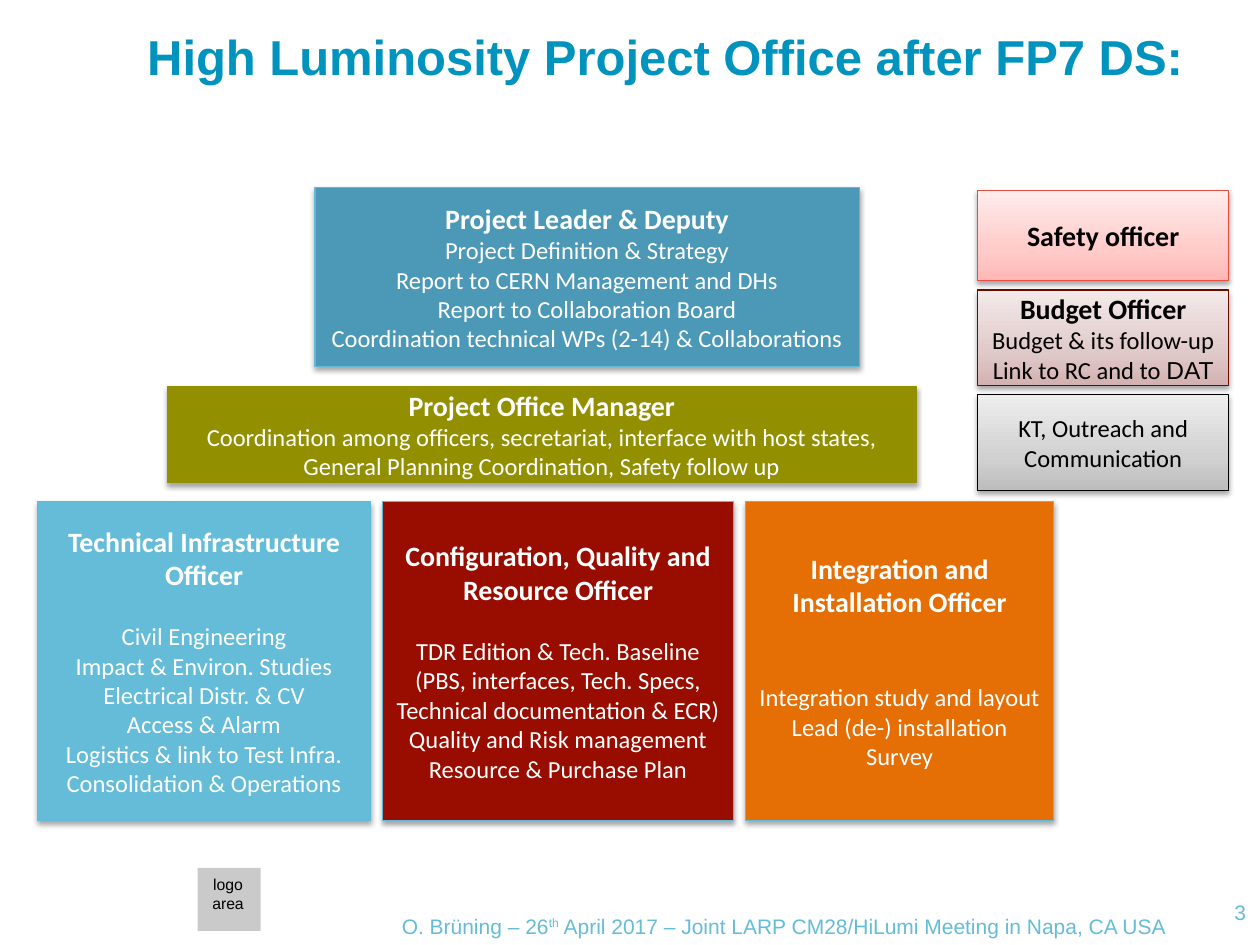
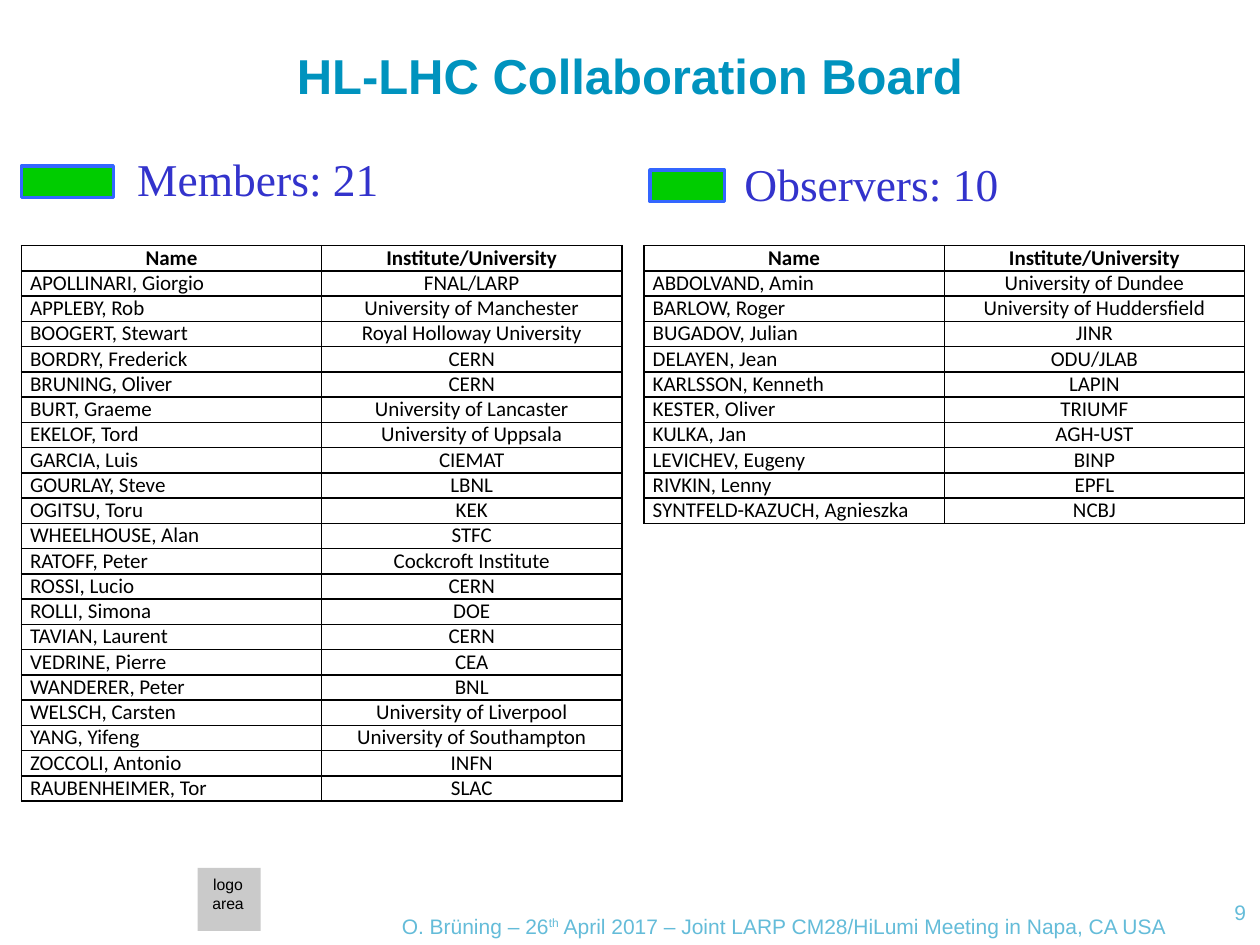
"""Build the two HL-LHC project office and collaboration board slides."""
import copy

import pptx
import pptx.dml.color
import pptx.enum.shapes
import pptx.enum.text
import pptx.oxml
import pptx.oxml.ns
import pptx.util

Pt = pptx.util.Pt
RGBColor = pptx.dml.color.RGBColor
ALIGN = pptx.enum.text.PP_ALIGN
ANCHOR = pptx.enum.text.MSO_ANCHOR
RECTANGLE = pptx.enum.shapes.MSO_SHAPE.RECTANGLE
qn = pptx.oxml.ns.qn

WHITE = RGBColor(0xFF, 0xFF, 0xFF)
BLACK = RGBColor(0x00, 0x00, 0x00)
TITLE_BLUE = RGBColor(0x00, 0x93, 0xBE)
SKY = RGBColor(0x64, 0xBC, 0xD9)
SKY_EDGE = RGBColor(0x5F, 0xB9, 0xD7)
STEEL = RGBColor(0x4C, 0x98, 0xB7)
OLIVE = RGBColor(0x92, 0x90, 0x00)
DARK_RED = RGBColor(0x98, 0x0D, 0x00)
ORANGE = RGBColor(0xE5, 0x6E, 0x05)
WINE = RGBColor(0x6E, 0x0A, 0x00)
RED = RGBColor(0xE5, 0x4E, 0x41)
LOGO_GREY = RGBColor(0xCA, 0xCA, 0xCA)
KEY_GREEN = RGBColor(0x00, 0xCC, 0x00)
KEY_EDGE = RGBColor(0x33, 0x66, 0xFF)
KEY_TEXT = RGBColor(0x33, 0x33, 0xCC)
PINKS = [RGBColor(0xFF, 0xB8, 0xB5), RGBColor(0xFF, 0xCC, 0xCA), RGBColor(0xFF, 0xEC, 0xEB)]
ROSES = [RGBColor(0xD4, 0xB1, 0xB1), RGBColor(0xE0, 0xC9, 0xC9), RGBColor(0xF4, 0xEA, 0xEA)]
GREYS = [RGBColor(0xBD, 0xBD, 0xBD), RGBColor(0xD1, 0xD1, 0xD1), RGBColor(0xEE, 0xEE, 0xEE)]
GRADIENT_POSITIONS = [0, 0.35, 1]

FOOTER = ["O. Brüning – 26", "th", " April 2017 – Joint LARP CM28/HiLumi Meeting in Napa, CA USA"]

LEADERS = [
    ((180, 107.3, 311, 102.2), STEEL, SKY_EDGE, "Project Leader & Deputy", [
        "Project Definition & Strategy", "Report to CERN Management and DHs",
        "Report to Collaboration Board", "Coordination technical WPs (2-14) & Collaborations"]),
    ((95.8, 221, 427.7, 54.7), OLIVE, OLIVE, "Project Office Manager", [
        "Coordination among officers, secretariat, interface with host states, "
        "General Planning Coordination, Safety follow up"]),
]
OFFICERS = [
    (190, SKY, 17, "Technical Infrastructure Officer", [
        "Civil Engineering", "Impact & Environ. Studies", "Electrical Distr. & CV",
        "Access & Alarm", "Logistics & link to Test Infra.", "Consolidation & Operations"]),
    (200.6, DARK_RED, 17, "Configuration, Quality and Resource Officer", [
        "TDR Edition & Tech. Baseline",
        "(PBS, interfaces, Tech. Specs, Technical documentation & ECR)",
        "Quality and Risk management", "Resource & Purchase Plan"]),
    (175.8, ORANGE, 36.5, "Integration and Installation Officer", [
        "Integration study and layout", "Lead (de-) installation", "Survey"]),
]
SUPPORT = [
    (51.8, PINKS, RED, "Safety officer", []),
    (54.7, ROSES, WINE, "Budget Officer", ["Budget & its follow-up", "Link to RC and to "]),
    (54.7, GREYS, BLACK, None, ["KT, Outreach and Communication"]),
]

TABLE_HEAD = ("Name", "Institute/University")
MEMBERS = [
    ("APOLLINARI, Giorgio", "FNAL/LARP"),
    ("APPLEBY, Rob", "University of Manchester"),
    ("BOOGERT, Stewart", "Royal Holloway University"),
    ("BORDRY, Frederick", "CERN"),
    ("BRUNING, Oliver", "CERN"),
    ("BURT, Graeme", "University of Lancaster"),
    ("EKELOF, Tord", "University of Uppsala"),
    ("GARCIA, Luis", "CIEMAT"),
    ("GOURLAY, Steve", "LBNL"),
    ("OGITSU, Toru", "KEK"),
    ("WHEELHOUSE, Alan", "STFC"),
    ("RATOFF, Peter", "Cockcroft Institute"),
    ("ROSSI, Lucio", "CERN"),
    ("ROLLI, Simona", "DOE"),
    ("TAVIAN, Laurent", "CERN"),
    ("VEDRINE, Pierre", "CEA"),
    ("WANDERER, Peter", "BNL"),
    ("WELSCH, Carsten", "University of Liverpool"),
    ("YANG, Yifeng", "University of Southampton"),
    ("ZOCCOLI, Antonio", "INFN"),
    ("RAUBENHEIMER, Tor", "SLAC"),
]
OBSERVERS = [
    ("ABDOLVAND, Amin", "University of Dundee"),
    ("BARLOW, Roger", "University of Huddersfield"),
    ("BUGADOV, Julian", "JINR"),
    ("DELAYEN, Jean", "ODU/JLAB"),
    ("KARLSSON, Kenneth", "LAPIN"),
    ("KESTER, Oliver", "TRIUMF"),
    ("KULKA, Jan", "AGH-UST"),
    ("LEVICHEV, Eugeny", "BINP"),
    ("RIVKIN, Lenny", "EPFL"),
    ("SYNTFELD-KAZUCH, Agnieszka", "NCBJ"),
]
BOARD = [
    ("Members: 21", (12.2, 95, 52.6, 18), (71.3, 82.8, 170, 70.6), 12.2, MEMBERS),
    ("Observers: 10", (371.5, 97.2, 42.5, 18), (418.3, 85.7, 173.5, 38.9), 368, OBSERVERS),
]
TABLE_TOP, ROW_HEIGHT, COLUMN_WIDTH = 140.4, 14.4, 171.6


def points(*lengths):
    return [Pt(length) for length in lengths]


def style_para(para, size, font, color, bold=False, align=ALIGN.CENTER):
    para.alignment = align
    for span in para.runs:
        span.font.size = Pt(size)
        span.font.name = font
        span.font.color.rgb = color
        span.font.bold = bold


def clear_margins(frame, anchor):
    frame.margin_left = frame.margin_right = frame.margin_top = frame.margin_bottom = 0
    frame.vertical_anchor = anchor
    frame.word_wrap = True
    frame.auto_size = pptx.enum.text.MSO_AUTO_SIZE.NONE


def add_text(page, place, text, size, font, color, align):
    box = page.shapes.add_textbox(*points(*place))
    frame = box.text_frame
    frame.word_wrap = True
    frame.text = text
    for para in frame.paragraphs:
        style_para(para, size, font, color, align=align)
    return frame


def add_rectangle(page, place, fill, edge=None, edge_width=0.75):
    box = page.shapes.add_shape(RECTANGLE, *points(*place))
    box.shadow.inherit = False
    if isinstance(fill, list):
        box.fill.gradient()
        box.fill.gradient_angle = 90
        stops = box._element.spPr.find(".//" + qn("a:gsLst"))
        stops.insert(1, copy.deepcopy(stops[0]))
        for stop, color, position in zip(box.fill.gradient_stops, fill, GRADIENT_POSITIONS):
            stop.color.rgb = color
            stop.position = position
    else:
        box.fill.solid()
        box.fill.fore_color.rgb = fill
    if edge is None:
        box.line.fill.background()
    else:
        box.line.color.rgb = edge
        box.line.width = Pt(edge_width)
    return box


def add_role(page, place, fill, edge, heading, duties, gap=0):
    box = add_rectangle(page, place, fill, edge)
    box._element.spPr.find(qn("a:effectLst")).append(pptx.oxml.parse_xml(
        f'<a:outerShdw {pptx.oxml.ns.nsdecls("a")} blurRad="{Pt(3.1)}" dist="{Pt(1.8)}" '
        'dir="5400000" rotWithShape="0"><a:srgbClr val="000000"><a:alpha val="35000"/>'
        '</a:srgbClr></a:outerShdw>'))
    color = BLACK if isinstance(fill, list) else WHITE
    frame = box.text_frame
    frame.vertical_anchor = ANCHOR.MIDDLE
    frame.text = "\n".join(([heading] if heading else []) + duties)
    for index, para in enumerate(frame.paragraphs):
        is_heading = index == 0 and heading is not None
        style_para(para, 16 if is_heading else 14, "Calibri", color, is_heading)
    if gap:
        frame.paragraphs[1].space_before = Pt(gap)
    return frame


def add_page(deck, title, title_place, number):
    page = deck.slides.add_slide(deck.slide_layouts[5])
    add_rectangle(page, (113, 496, 36, 36), LOGO_GREY)
    logo = add_text(page, (115.2, 499.7, 30.2, 21.6), "logo\narea", 9, "Arial", BLACK, ALIGN.CENTER)
    clear_margins(logo, ANCHOR.TOP)

    heading = page.shapes.title
    heading.left, heading.top, heading.width, heading.height = points(*title_place)
    heading.text_frame.text = title
    clear_margins(heading.text_frame, ANCHOR.MIDDLE)
    style_para(heading.text_frame.paragraphs[0], 28, "Arial", TITLE_BLUE, True)

    page_number = add_text(page, (684, 500.4, 28, 28), number, 12, "Arial", SKY, ALIGN.RIGHT)
    clear_margins(page_number, ANCHOR.BOTTOM)

    footer = add_text(page, (144.7, 508.3, 522, 28), FOOTER[0], 12, "Arial", SKY, ALIGN.RIGHT)
    clear_margins(footer, ANCHOR.BOTTOM)
    para = footer.paragraphs[0]
    for part in FOOTER[1:]:
        para.add_run().text = part
    style_para(para, 12, "Arial", SKY, align=ALIGN.RIGHT)
    para.runs[1]._r.get_or_add_rPr().set("baseline", "30000")
    return page


def add_borders(cell):
    properties = cell._tc.get_or_add_tcPr()
    for index, side in enumerate(("lnL", "lnR", "lnT", "lnB")):
        properties.insert(index, pptx.oxml.parse_xml(
            f'<a:{side} {pptx.oxml.ns.nsdecls("a")} w="{Pt(1)}"><a:solidFill>'
            f'<a:srgbClr val="{BLACK}"/></a:solidFill></a:{side}>'))


def add_people(page, left, people):
    rows = [TABLE_HEAD] + people
    frame = page.shapes.add_table(
        len(rows), 2, *points(left, TABLE_TOP, 2 * COLUMN_WIDTH, len(rows) * ROW_HEIGHT))
    table = frame.table
    table.horz_banding = False
    for column in table.columns:
        column.width = Pt(COLUMN_WIDTH)
    for row_index, row in enumerate(rows):
        table.rows[row_index].height = Pt(ROW_HEIGHT)
        for column_index, text in enumerate(row):
            cell = table.cell(row_index, column_index)
            cell.margin_left = cell.margin_right = Pt(5)
            cell.margin_top = cell.margin_bottom = 0
            cell.fill.solid()
            cell.fill.fore_color.rgb = WHITE
            add_borders(cell)
            cell.text_frame.text = text
            para = cell.text_frame.paragraphs[0]
            para.line_spacing = Pt(ROW_HEIGHT)
            is_name = row_index > 0 and column_index == 0
            style_para(para, 12, "Calibri", BLACK, row_index == 0,
                       ALIGN.LEFT if is_name else ALIGN.CENTER)


def build_office(deck):
    page = add_page(deck, "High Luminosity Project Office after FP7 DS:",
                    (48.2, 3.6, 663.8, 56.9), "3")
    left = 21.6
    for width, fill, gap, heading, duties in OFFICERS:
        add_role(page, (left, 286.6, width, 182.2), fill, SKY_EDGE, heading, duties, gap)
        left += width + 7
    for place, fill, edge, heading, duties in LEADERS:
        add_role(page, place, fill, edge, heading, duties)
    top = 108.7
    for height, fill, edge, heading, duties in SUPPORT:
        frame = add_role(page, (558.7, top, 143.4, height), fill, edge, heading, duties)
        top += height + 5.2
        if heading == "Budget Officer":
            para = frame.paragraphs[-1]
            para.add_run().text = "DAT"
            style_para(para, 14, "Calibri", BLACK)
            para.runs[-1].font.name = "Arial"


def build_board(deck):
    page = add_page(deck, "HL-LHC Collaboration Board", (48.2, 14.4, 623.5, 56.9), "9")
    for label, key_place, label_place, table_left, people in BOARD:
        add_rectangle(page, key_place, KEY_GREEN, KEY_EDGE, 2)
        add_text(page, label_place, label, 26, "Times New Roman", KEY_TEXT, ALIGN.LEFT)
        add_people(page, table_left, people)


def main():
    deck = pptx.Presentation()
    deck.slide_width, deck.slide_height = points(720, 540)
    build_office(deck)
    build_board(deck)
    deck.save("out.pptx")


if __name__ == "__main__":
    main()
